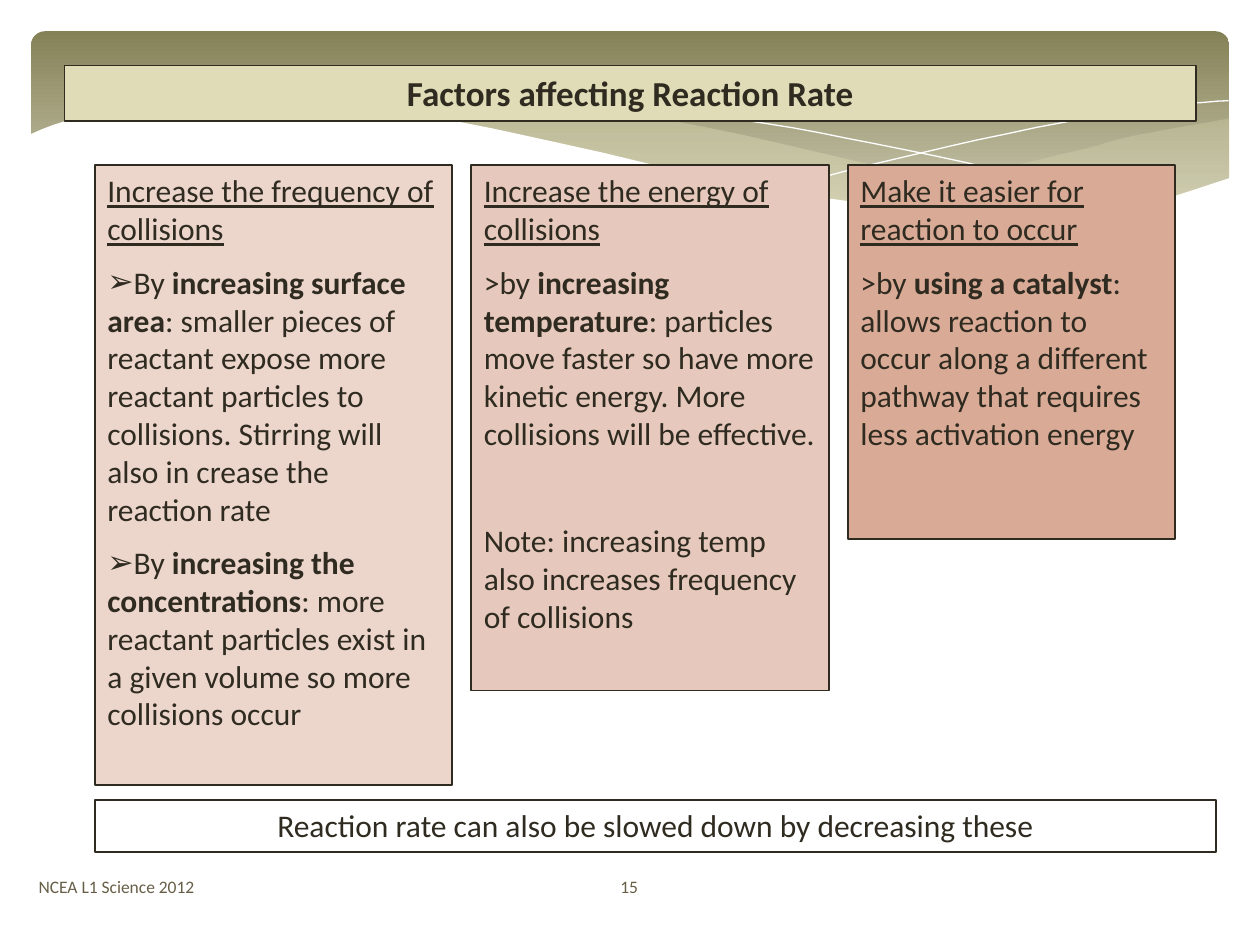
from lxml import etree
from pptx import Presentation
from pptx import util as u
from pptx.dml.color import RGBColor
from pptx.enum import shapes, text
from pptx.oxml import ns

INK, SAND, GREY, WHITE = "2F2B20", "DFDCB7", "675E47", "FFFFFF"
FONT = "Calibri"

UPPER = [(24.79, 2.39), (23.75, 2.57), (22.63, 2.79), (21.87, 3), (20.45, 3.33),
         (18.52, 3.73), (16.79, 4.06)]
LOWER = [(16.79, 4.06), (18.26, 4.27), (19.84, 4.37), (21.21, 4.37), (22.38, 4.24),
         (23.57, 4.01), (24.79, 3.58)]
CREST = [(22.68, 4.24), (20.5, 3.91), (17.93, 3.4), (15.98, 2.95), (14.1, 2.54),
         (12.42, 2.26), (10.67, 2.08), (9.17, 2.03), (7.26, 2.18)]
TROUGH = [(7.26, 2.18), (9.19, 2.46), (11.4, 2.95), (14.38, 3.63), (16.51, 4.01),
          (18.34, 4.27), (20.22, 4.39), (21.54, 4.37), (22.68, 4.24)]
FALL = [(7.85, 2.29), (8.74, 2.13), (10.57, 2.06), (12.95, 2.18), (15.44, 2.49),
        (17.65, 2.9), (20.19, 3.45), (23.04, 4.22)]
RISE = [(15.57, 3.84), (17.65, 3.3), (19.71, 2.82), (22, 2.36), (23.47, 2.13),
        (24.77, 2.03)]
EDGE = [(24.82, 3.58), (23.11, 4.11), (21.59, 4.32), (19.76, 4.32), (17.48, 4.11),
        (14.71, 3.66), (11.35, 2.9), (8.64, 2.34), (6.35, 2.06), (4.5, 1.98),
        (2.69, 2.11), (1.32, 2.44), (0.58, 2.72)]
BASE = [(0.58, 5.68), (24.82, 5.68)]

COLUMNS = [
    (1, 1.91, 7.21, 12.5, "ECD6CC", [
        ("Increase the frequency of collisions", 0, False),
        (("By ", "increasing surface area",
          ": smaller pieces of reactant expose more reactant particles to "
          "collisions. Stirring will also in crease the reaction rate"), 9, True),
        (("By ", "increasing the concentrations",
          ": more reactant particles exist in a given volume so more "
          "collisions occur"), 9, True)]),
    (2, 9.5, 7.21, 10.59, "E6C9BC", [
        ("Increase the energy of collisions", 0, False),
        ((">by ", "increasing temperature",
          ": particles move faster so have more kinetic energy. More "
          "collisions will be effective."), 9, False),
        (("Note: increasing temp also increases frequency of collisions",),
         39.6, False)]),
    (3, 17.09, 6.6, 7.54, "D9AB97", [
        ("Make it easier for reaction to occur", 0, False),
        ((">by ", "using a catalyst",
          ": allows reaction to occur along a different pathway that "
          "requires less activation energy"), 9, False)]),
]


def tint(hue):
    return RGBColor.from_string(hue)


def paint(shape, hue, line=None, width=1.0):
    if hue:
        shape.fill.solid()
        shape.fill.fore_color.rgb = tint(hue)
    else:
        shape.fill.background()
    if line:
        shape.line.color.rgb = tint(line)
        shape.line.width = u.Pt(width)
    else:
        shape.line.fill.background()


def smooth(pts, steps=4):
    ends = [pts[0], *pts, pts[-1]]
    out = []
    for a, b, c, d in zip(ends, ends[1:], ends[2:], ends[3:]):
        for k in range(steps):
            t = k / steps
            out.append(tuple(
                q + t * (r - p) / 2 + t * t * (2 * p - 5 * q + 4 * r - s) / 2
                + t ** 3 * (3 * q - p - 3 * r + s) / 2
                for p, q, r, s in zip(a, b, c, d)))
    return out + [pts[-1]]


def wave(slide, pts, hue=None, alpha=None):
    grid = [(round(x * 100), round(y * 100)) for x, y in pts]
    pen = slide.shapes.build_freeform(*grid[0], scale=u.Cm(0.01))
    pen.add_line_segments(grid[1:], close=bool(hue))
    shape = pen.convert_to_shape()
    shape.shadow.inherit = False
    paint(shape, hue, None if hue else WHITE, 0)
    if alpha:
        node = shape.fill._xPr.find(".//" + ns.qn("a:srgbClr"))
        etree.SubElement(node, ns.qn("a:alpha"), val=str(alpha * 1000))


def band(slide):
    shape = slide.shapes.add_shape(
        shapes.MSO_SHAPE.ROUNDED_RECTANGLE,
        u.Cm(0.63), u.Cm(0.63), u.Cm(24.15), u.Cm(3.96))
    shape.adjustments[0] = 0.07
    shape.shadow.inherit = False
    shape.line.fill.background()
    shape.fill.gradient()
    shape.fill.gradient_angle = 270
    for stop, hue, pos in zip(shape.fill.gradient_stops, ("858157", "CBC9B0"), (0, 0.9)):
        stop.color.rgb = tint(hue)
        stop.position = pos


def write(para, words, size=18, hue=INK, bold=False, line=False):
    run = para.add_run()
    run.text = words
    font = run.font
    font.name, font.size, font.bold, font.underline = FONT, u.Pt(size), bold, line
    font.color.rgb = tint(hue)


def style(para, gap=0, bullet=False, align=text.PP_ALIGN.LEFT):
    para.alignment = align
    para.space_before = u.Pt(gap)
    props = para._p.get_or_add_pPr()
    props.set("marL", "0")
    props.set("indent", "0")
    if bullet:
        etree.SubElement(props, ns.qn("a:buChar"), char="➢")
    else:
        etree.SubElement(props, ns.qn("a:buNone"))


def place(slide, idx, box, hue, width=1.0):
    shape = slide.placeholders[idx]
    shape.left, shape.top, shape.width, shape.height = map(u.Cm, box)
    paint(shape, hue, INK, width)
    frame = shape.text_frame
    frame.word_wrap = True
    frame.auto_size = text.MSO_AUTO_SIZE.NONE
    frame.vertical_anchor = text.MSO_ANCHOR.TOP
    slide.shapes._spTree.append(shape._element)
    return frame


def panel(slide, idx, left, width, height, hue, paras):
    frame = place(slide, idx, (left, 3.33, width, height), hue)
    for n, (parts, gap, bullet) in enumerate(paras):
        para = frame.add_paragraph() if n else frame.paragraphs[0]
        style(para, gap, bullet)
        if n == 0:
            write(para, parts, line=True)
            continue
        for k, words in enumerate(parts):
            write(para, words, bold=k == 1)


def banner(slide, idx, box, words, hue, width, size, bold):
    para = place(slide, idx, box, hue, width).paragraphs[0]
    style(para, align=text.PP_ALIGN.CENTER)
    write(para, words, size, bold=bold)


def foot(slide, left, width, words, align):
    box = slide.shapes.add_textbox(u.Cm(left), u.Cm(17.37), u.Cm(width), u.Cm(1.02))
    frame = box.text_frame
    frame.word_wrap = True
    frame.vertical_anchor = text.MSO_ANCHOR.MIDDLE
    frame.paragraphs[0].alignment = align
    write(frame.paragraphs[0], words, 10, GREY)


def main():
    deck = Presentation()
    deck.slide_width, deck.slide_height = u.Cm(25.4), u.Cm(19.05)
    slide = deck.slides.add_slide(deck.slide_layouts[4])
    band(slide)
    wave(slide, smooth(UPPER) + smooth(LOWER), SAND, 29)
    wave(slide, smooth(CREST) + smooth(TROUGH), SAND, 40)
    wave(slide, smooth(FALL))
    wave(slide, smooth(RISE))
    wave(slide, smooth(EDGE) + BASE, WHITE)
    foot(slide, 0.53, 10.52, "NCEA L1 Science 2012", text.PP_ALIGN.LEFT)
    foot(slide, 11.07, 3.23, "15", text.PP_ALIGN.CENTER)
    for column in COLUMNS:
        panel(slide, *column)
    banner(slide, 4, (1.91, 16.13, 22.61, 1.04),
           "Reaction rate can also be slowed down by decreasing these",
           WHITE, 1, 18, False)
    banner(slide, 0, (1.3, 1.32, 22.81, 1.12),
           "Factors affecting Reaction Rate", SAND, 0.75, 20, True)
    deck.save("out.pptx")


if __name__ == "__main__":
    main()
